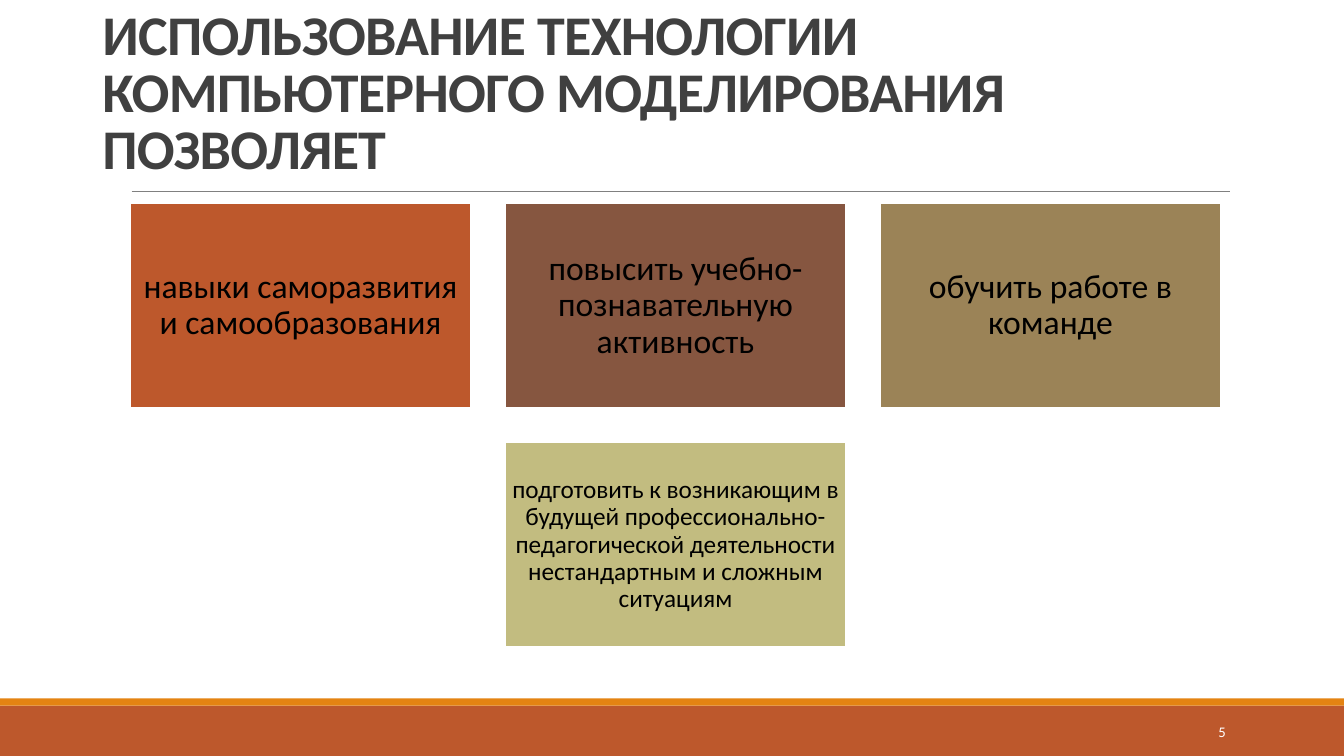
from lxml import etree
from pptx import Presentation
from pptx.dml.color import RGBColor
from pptx.enum.shapes import MSO_CONNECTOR, MSO_SHAPE
from pptx.enum.text import MSO_ANCHOR, PP_ALIGN
from pptx.oxml.ns import qn
from pptx.util import Cm, Pt

RECTANGLE = MSO_SHAPE.RECTANGLE
STRAIGHT = MSO_CONNECTOR.STRAIGHT
MIDDLE, BOTTOM = MSO_ANCHOR.MIDDLE, MSO_ANCHOR.BOTTOM
LEFT, CENTER, RIGHT = PP_ALIGN.LEFT, PP_ALIGN.CENTER, PP_ALIGN.RIGHT


def color(value):
    return RGBColor.from_string(value)


def write(shape, text, size, ink, align, anchor, spacing=1.0, inset=(0.25, 0.13)):
    frame = shape.text_frame
    frame.word_wrap = True
    frame.vertical_anchor = anchor
    frame.margin_left = frame.margin_right = Cm(inset[0])
    frame.margin_top = frame.margin_bottom = Cm(inset[1])
    paragraph = frame.paragraphs[0]
    paragraph.alignment = align
    paragraph.line_spacing = spacing
    run = paragraph.add_run()
    run.text = text
    run.font.name = "Calibri"
    run.font.size = Pt(size)
    run.font.color.rgb = color(ink)
    return run


presentation = Presentation()
presentation.slide_width = Cm(33.87)
presentation.slide_height = Cm(19.05)
slide = presentation.slides.add_slide(presentation.slide_layouts[6])
shapes = slide.shapes

for top, height, fill in [(17.78, 1.27, "BD582C"), (17.6, 0.18, "E48312")]:
    band = shapes.add_shape(RECTANGLE, 0, Cm(top), presentation.slide_width, Cm(height))
    band.shadow.inherit = False
    band.fill.solid()
    band.fill.fore_color.rgb = color(fill)
    band.line.fill.background()

rule = shapes.add_connector(STRAIGHT, Cm(3.32), Cm(4.82), Cm(31), Cm(4.82))
rule.line.color.rgb = color("808080")
rule.line.width = Pt(0.5)
etree.SubElement(rule._element.spPr, qn("a:effectLst"))

title = shapes.add_textbox(Cm(2.33), Cm(1.02), Cm(30.6), Cm(3.68))
title_run = write(
    title,
    "ИСПОЛЬЗОВАНИЕ ТЕХНОЛОГИИ КОМПЬЮТЕРНОГО МОДЕЛИРОВАНИЯ ПОЗВОЛЯЕТ",
    40, "404040", LEFT, BOTTOM, spacing=0.85,
)
title_run.font.bold = True
title_run._r.get_or_add_rPr().set("spc", "-50")

cards = [
    (0, 0, "BD582C", 24, 0.25, "навыки саморазвития и самообразования"),
    (1, 0, "865640", 24, 0.25, "повысить учебно-познавательную активность"),
    (2, 0, "9B8357", 24, 0.25, "обучить работе в команде"),
    (1, 1, "C2BC80", 18, 0.18,
     "подготовить к возникающим в будущей профессионально-педагогической "
     "деятельности нестандартным и сложным ситуациям"),
]
for column, row, fill, size, inset, text in cards:
    card = shapes.add_shape(
        RECTANGLE, Cm(3.28 + 9.45 * column), Cm(5.13 + 6.02 * row), Cm(8.59), Cm(5.16)
    )
    card.shadow.inherit = False
    card.fill.solid()
    card.fill.fore_color.rgb = color(fill)
    card.line.color.rgb = color("FFFFFF")
    card.line.width = Pt(1.25)
    write(card, text, size, "000000", CENTER, MIDDLE, spacing=0.9, inset=(inset, inset))

number = shapes.add_textbox(Cm(27.51), Cm(17.93), Cm(3.63), Cm(1.02))
write(number, "5", 10.5, "FFFFFF", RIGHT, MIDDLE)

presentation.save("out.pptx")
